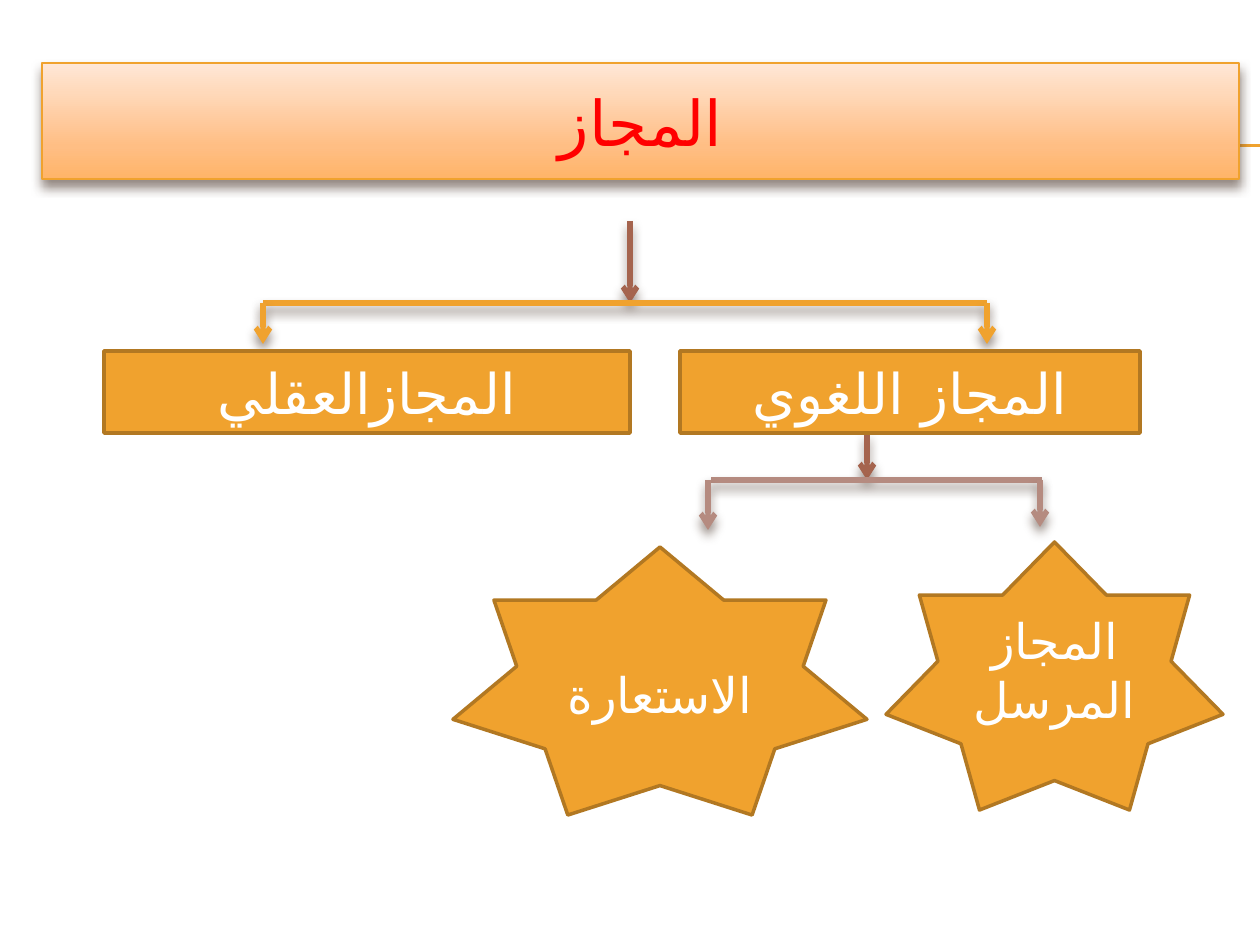
from copy import deepcopy

from lxml.etree import SubElement
from pptx import Presentation
from pptx.dml.color import RGBColor
from pptx.enum.shapes import MSO_CONNECTOR, MSO_SHAPE
from pptx.enum.text import MSO_ANCHOR, PP_ALIGN
from pptx.oxml.ns import qn
from pptx.util import Emu, Pt

FONT, ARABIC_FONT = "Roboto", "DejaVu Sans"
ORANGE, DARK_ORANGE = "F0A22E", "B27822"
BROWN, ROSE = "A5644E", "B58B80"
WHITE, RED, SHADOW = "FFFFFF", "FF0000", "4E3B30"
TITLE_STOPS = [(0, "FFE7D7"), (0.72, "FFBE84"), (1, "FFB468")]


def px(length):
    return Emu(round(length * 914400 / 126))


def rgb(value):
    return RGBColor.from_string(value)


def add_shadow(effects):
    shadow = SubElement(effects, qn("a:outerShdw"), blurRad=str(Pt(6)), dist=str(Pt(4)),
                        dir="5400000", rotWithShape="0")
    color = SubElement(shadow, qn("a:srgbClr"), val=SHADOW)
    SubElement(color, qn("a:alpha"), val="60000")


def add_line(slide, start, end, color, width=3, arrow=False, shadow=True):
    line = slide.shapes.add_connector(MSO_CONNECTOR.STRAIGHT, *map(px, (*start, *end)))
    line.line.color.rgb = rgb(color)
    line.line.width = Pt(width)
    properties = line._element.spPr
    if arrow:
        SubElement(properties.find(qn("a:ln")), qn("a:tailEnd"), type="arrow")
    effects = SubElement(properties, qn("a:effectLst"))
    if shadow:
        add_shadow(effects)


def add_label(slide, kind, box, text, size, color=WHITE, outline=DARK_ORANGE,
              outline_width=2, extra_top=0):
    """Add a filled shape with centred right-to-left text; extra_top lowers the text."""
    shape = slide.shapes.add_shape(kind, *map(px, box))
    shape.shadow.inherit = False
    shape.fill.solid()
    shape.fill.fore_color.rgb = rgb(ORANGE)
    shape.line.color.rgb = rgb(outline)
    shape.line.width = Pt(outline_width)
    frame = shape.text_frame
    frame.word_wrap = True
    frame.vertical_anchor = MSO_ANCHOR.MIDDLE
    frame.margin_top += px(extra_top)
    paragraph = frame.paragraphs[0]
    paragraph.alignment = PP_ALIGN.CENTER
    paragraph._p.get_or_add_pPr().set("rtl", "1")
    run = paragraph.add_run()
    run.text = text
    run.font.size = Pt(size)
    run.font.name = FONT
    run.font.color.rgb = rgb(color)
    SubElement(run._r.get_or_add_rPr(), qn("a:cs"), typeface=ARABIC_FONT)
    return shape


def add_title(slide, box):
    left, top, width, height = box
    for y in (top + 82, top + 83):
        add_line(slide, (left + 29, y), (1260, y), ORANGE, width=0.75, shadow=False)
    title = add_label(slide, MSO_SHAPE.RECTANGLE, box, "المجاز", 36, RED, ORANGE, 0.79)
    title.fill.gradient()
    title.fill.gradient_angle = 270
    stop_list = title._element.spPr.find(".//" + qn("a:gsLst"))
    stop_list.append(deepcopy(stop_list[-1]))
    for stop, (position, color) in zip(title.fill.gradient_stops, TITLE_STOPS):
        stop.position = position
        stop.color.rgb = rgb(color)
    add_shadow(title._element.spPr.find(qn("a:effectLst")))


def add_branch(slide, stem, bar, drops, color):
    """Draw a stem arrow down to a bar, then an arrow from the bar to each drop.

    stem is (x, top), bar is (left, right, y), and drops are (x, bottom) pairs.
    """
    left, right, y = bar
    add_line(slide, stem, (stem[0], y), BROWN, arrow=True)
    add_line(slide, (right, y), (left, y), color)
    for x, bottom in drops:
        add_line(slide, (x, y), (x, bottom), color, arrow=True)


def main():
    presentation = Presentation()
    presentation.slide_width, presentation.slide_height = px(1260), px(945)
    slide = presentation.slides.add_slide(presentation.slide_layouts[6])

    add_title(slide, (42, 63, 1197, 116))
    add_branch(slide, (630, 221), (263, 987, 303), [(987, 344), (263, 344)], ORANGE)
    add_branch(slide, (867, 433), (711, 1042, 480), [(1040, 527), (708, 530)], ROSE)

    add_label(slide, MSO_SHAPE.FLOWCHART_PROCESS, (680, 351, 460, 82), "المجاز اللغوي", 32)
    add_label(slide, MSO_SHAPE.RECTANGLE, (104, 351, 526, 82), "المجازالعقلي", 32)
    add_label(slide, MSO_SHAPE.STAR_7_POINT, (886, 542, 337, 268), "المجاز المرسل", 28)
    add_label(slide, MSO_SHAPE.STAR_7_POINT, (453, 547, 414, 268), "الاستعارة", 28,
              extra_top=38)
    presentation.save("out.pptx")


if __name__ == "__main__":
    main()
